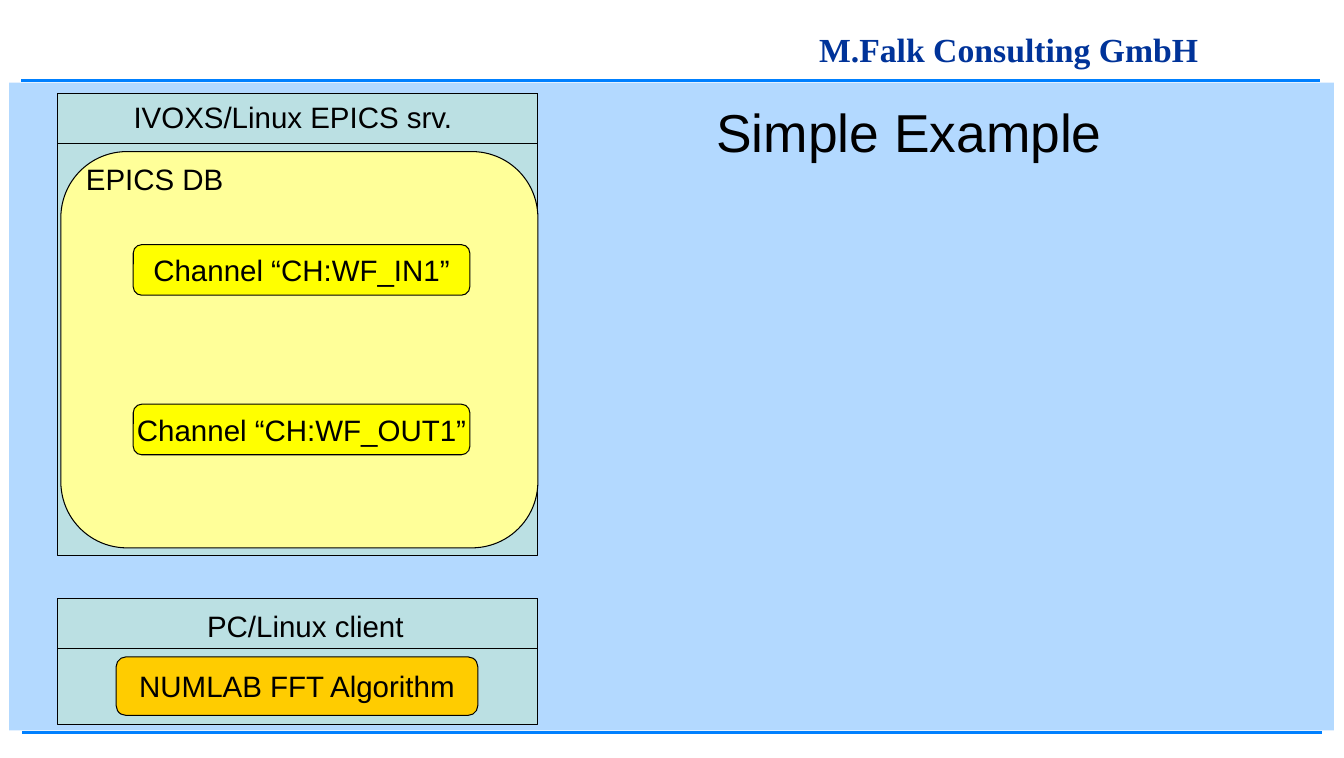
from lxml import etree
from pptx import Presentation
from pptx import util as u
from pptx.dml.color import RGBColor
from pptx.enum import shapes, text
from pptx.oxml.ns import qn

Cm, Pt = u.Cm, u.Pt
BLACK = RGBColor(0, 0, 0)
NAVY = RGBColor(0x00, 0x33, 0x99)
RULE_BLUE = RGBColor(0x00, 0x80, 0xFF)
PANEL_BLUE = RGBColor(0xB3, 0xD9, 0xFF)
TEAL = RGBColor(0xBB, 0xE0, 0xE3)
PALE_YELLOW = RGBColor(0xFF, 0xFF, 0x99)
YELLOW = RGBColor(0xFF, 0xFF, 0x00)
ORANGE = RGBColor(0xFF, 0xCC, 0x00)

RECT = shapes.MSO_SHAPE.RECTANGLE
ROUNDED = shapes.MSO_SHAPE.FLOWCHART_ALTERNATE_PROCESS
LEFT, CENTER = text.PP_ALIGN.LEFT, text.PP_ALIGN.CENTER
TOP, MIDDLE = text.MSO_ANCHOR.TOP, text.MSO_ANCHOR.MIDDLE
HEAD_H = 1.27


def write(sp, words, size=21, align=CENTER, anchor=TOP, wrap=True,
          font="Arial", color=BLACK, bold=False):
    tf = sp.text_frame
    tf.word_wrap = wrap
    tf.auto_size = text.MSO_AUTO_SIZE.NONE
    tf.vertical_anchor = anchor
    tf.margin_left = tf.margin_right = Cm(0.3)
    tf.margin_top = tf.margin_bottom = Cm(0.15)
    p = tf.paragraphs[0]
    p.alignment = align
    r = p.add_run()
    r.text = words
    r.font.name, r.font.size = font, Pt(size)
    r.font.bold, r.font.color.rgb = bold, color


def add_box(s, kind, x, y, w, h, fill=None, outline=True):
    sp = s.shapes.add_shape(kind, Cm(x), Cm(y), Cm(w), Cm(h))
    sp.shadow.inherit = False
    if fill is None:
        sp.fill.background()
    else:
        sp.fill.solid()
        sp.fill.fore_color.rgb = fill
    if outline:
        sp.line.color.rgb = BLACK
        sp.line.width = Pt(0.75)
    else:
        sp.line.fill.background()
    return sp


def add_label(s, x, y, w, h, words, **style):
    write(s.shapes.add_textbox(Cm(x), Cm(y), Cm(w), Cm(h)), words, **style)


def add_button(s, x, y, w, h, fill, words):
    write(add_box(s, ROUNDED, x, y, w, h, fill), words, anchor=MIDDLE, wrap=False)


def add_rule(s, x, y, w):
    ln = s.shapes.add_connector(shapes.MSO_CONNECTOR.STRAIGHT,
                                Cm(x), Cm(y), Cm(x + w), Cm(y))
    ln.line.color.rgb = RULE_BLUE
    ln.line.width = Pt(2)
    etree.SubElement(ln.element.spPr, qn("a:effectLst"))


def add_frame(s, x, y, w, h):
    # Blue panel between two rules, company name above
    add_box(s, RECT, x, y, w, h, PANEL_BLUE, outline=False)
    add_rule(s, x + 0.33, y + h + 0.06, 32.66)
    add_rule(s, x + 0.3, y - 0.05, 32.64)
    add_label(s, x + 20.06, y - 1.5, 11.84, 1.32, "M.Falk Consulting GmbH",
              size=24, align=LEFT, font="Times New Roman", color=NAVY, bold=True)


def add_client(s, x, y, w, h):
    add_box(s, RECT, x, y, w, h, TEAL)
    add_button(s, x + 1.47, y + 1.47, 9.09, 1.47, ORANGE, "NUMLAB FFT Algorithm")
    add_label(s, x + 2.29, y + 0.08, 7.87, 1.2, "PC/Linux client")
    add_box(s, RECT, x, y, w, HEAD_H)


def add_server(s, x, y, w, h):
    add_box(s, RECT, x, y, w, h, TEAL)
    add_box(s, ROUNDED, x + 0.08, y + 1.47, w - 0.08, 9.96, PALE_YELLOW)
    add_label(s, x + 1.47, y, 8.89, 1.2, "IVOXS/Linux EPICS srv.", wrap=False)
    add_box(s, RECT, x, y, w, HEAD_H)
    # Channels in the database
    for i, name in enumerate(("IN1", "OUT1")):
        add_button(s, x + 1.9, y + 3.81 + 4.01 * i, 8.46, 1.27, YELLOW,
                   f"Channel “CH:WF_{name}”")
    add_label(s, x + 0.41, y + 1.55, 4.65, 1.2, "EPICS DB", align=LEFT)


def add_title(s, x, y, w, h):
    title = s.shapes.title
    title.left, title.top, title.width, title.height = Cm(x), Cm(y), Cm(w), Cm(h)
    write(title, "Simple Example", size=38)
    # Bring the title in front of the panel
    title.element.getparent().append(title.element)


def main():
    prs = Presentation()
    prs.slide_width, prs.slide_height = Cm(33.78), Cm(19.05)
    s = prs.slides.add_slide(prs.slide_layouts.get_by_name("Title Only"))
    add_frame(s, 0.23, 2.08, 33.3, 16.28)
    add_client(s, 1.45, 15.04, 12.07, 3.18)
    add_server(s, 1.45, 2.34, 12.07, 11.63)
    add_title(s, 14.15, 2.34, 17.4, 1.9)
    prs.save("out.pptx")


if __name__ == "__main__":
    main()
